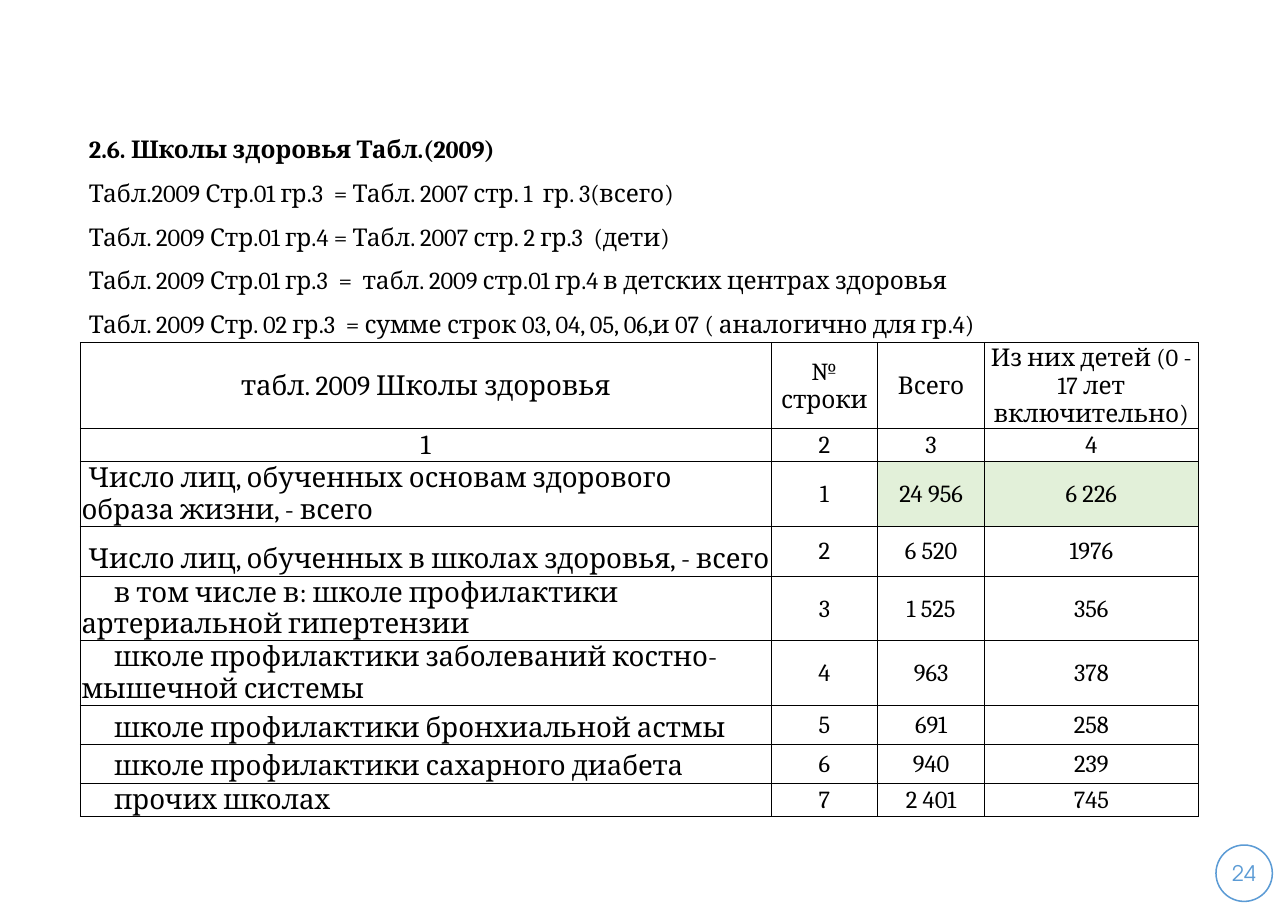
from dataclasses import dataclass

from lxml.etree import SubElement
from pptx import Presentation
from pptx.dml.color import RGBColor
from pptx.enum.shapes import MSO_SHAPE as Shape
from pptx.enum.text import MSO_ANCHOR as Anchor, MSO_AUTO_SIZE as AutoSize, PP_ALIGN as Align
from pptx.oxml.ns import qn
from pptx.util import Cm, Pt

COLORS = {"text": "000000", "accent": "5B9BD5", "total": "E2F0D9"}
SERIF, SANS = "Cambria", "TeX Gyre Adventor"


@dataclass
class SchoolRow:
    label: str
    values: tuple[str, ...]
    height: float
    indent: float | None = None  # None centres the label
    highlighted: bool = False


TITLE = "2.6. Школы здоровья Табл.(2009)"
CHECKS = [
    "Табл.2009 Стр.01 гр.3  = Табл. 2007 стр. 1  гр. 3(всего)",
    "Табл. 2009 Стр.01 гр.4 = Табл. 2007 стр. 2 гр.3  (дети)",
    "Табл. 2009 Стр.01 гр.3  =  табл. 2009 стр.01 гр.4 в детских центрах здоровья",
    "Табл. 2009 Стр. 02 гр.3  = сумме строк 03, 04, 05, 06,и 07 ( аналогично для гр.4)",
]
COLUMN_WIDTHS = (15.93, 2.46, 2.46, 4.93)
TOTAL, SCHOOL = 0.16, 0.75  # first-line indents of the labels, cm
ROWS = [
    SchoolRow("табл. 2009 Школы здоровья",
              ("№ строки", "Всего", "Из них детей (0 - 17 лет включительно)"), 1.8),
    SchoolRow("1", ("2", "3", "4"), 0.71),
    SchoolRow("Число лиц, обученных основам здорового образа жизни, - всего",
              ("1", "24 956", "6 226"), 1.4, TOTAL, True),
    SchoolRow("Число лиц, обученных в школах здоровья, - всего",
              ("2", "6 520", "1976"), 1.14, TOTAL),
    SchoolRow("в том числе в: школе профилактики артериальной гипертензии",
              ("3", "1 525", "356"), 1.4, SCHOOL),
    SchoolRow("школе профилактики заболеваний костно-мышечной системы",
              ("4", "963", "378"), 1.4, SCHOOL),
    SchoolRow("школе профилактики бронхиальной астмы", ("5", "691", "258"), 0.89, SCHOOL),
    SchoolRow("школе профилактики сахарного диабета", ("6", "940", "239"), 0.89, SCHOOL),
    SchoolRow("прочих школах", ("7", "2 401", "745"), 0.71, SCHOOL),
]


def rgb(name: str) -> RGBColor:
    return RGBColor.from_string(COLORS[name])


def add_text(paragraph, text: str, size: float, align, font=SERIF,
             color="text", bold=False) -> None:
    paragraph.alignment = align
    run = paragraph.add_run()
    run.text = text
    run.font.name, run.font.size, run.font.bold = font, Pt(size), bold
    run.font.color.rgb = rgb(color)


def set_indent(paragraph, first_line: float) -> None:
    properties = paragraph._p.get_or_add_pPr()
    properties.set("marL", "0")
    properties.set("indent", str(Cm(first_line)))


def add_borders(cell) -> None:
    properties = cell._tc.get_or_add_tcPr()
    for side in ("a:lnL", "a:lnR", "a:lnT", "a:lnB"):
        border = SubElement(properties, qn(side), w=str(Pt(0.5)))
        SubElement(SubElement(border, qn("a:solidFill")), qn("a:srgbClr"), val=COLORS["text"])


def add_checks(slide) -> None:
    checks = slide.placeholders[1]
    checks.left, checks.top, checks.width, checks.height = Cm(1.65), Cm(2.7), Cm(23.2), Cm(16.03)
    frame = checks.text_frame
    frame.word_wrap, frame.auto_size = True, AutoSize.NONE
    frame.vertical_anchor = Anchor.TOP
    frame.margin_left = frame.margin_right = frame.margin_top = frame.margin_bottom = Cm(0.4)
    for index, line in enumerate([TITLE, *CHECKS]):
        paragraph = frame.add_paragraph() if index else frame.paragraphs[0]
        set_indent(paragraph, 0)
        paragraph.space_before = Pt(9.3 if index else 0)
        SubElement(paragraph._p.get_or_add_pPr(), qn("a:buNone"))
        add_text(paragraph, line, 16, Align.JUSTIFY, bold=index == 0)


def fill_cell(cell, text: str, row: SchoolRow, column: int) -> None:
    is_label = column == 0
    indented = is_label and row.indent is not None
    cell.margin_left = cell.margin_right = cell.margin_top = Cm(0.03)
    cell.margin_bottom = 0
    cell.vertical_anchor = Anchor.BOTTOM if indented else Anchor.MIDDLE
    add_borders(cell)
    if row.highlighted and column >= 2:
        cell.fill.solid()
        cell.fill.fore_color.rgb = rgb("total")
    else:
        cell.fill.background()
    paragraph = cell.text_frame.paragraphs[0]
    if indented:
        set_indent(paragraph, row.indent)
    add_text(paragraph, text, 18 if is_label else 16, Align.LEFT if indented else Align.CENTER)


def add_schools(slide) -> None:
    schools = slide.shapes.add_table(
        len(ROWS), len(COLUMN_WIDTHS), Cm(1.85), Cm(7.9),
        Cm(sum(COLUMN_WIDTHS)), Cm(sum(row.height for row in ROWS))).table
    schools.first_row = schools.horz_banding = False
    for column, width in zip(schools.columns, COLUMN_WIDTHS):
        column.width = Cm(width)
    for index, row in enumerate(ROWS):
        schools.rows[index].height = Cm(row.height)
        for column, text in enumerate((row.label, *row.values)):
            fill_cell(schools.cell(index, column), text, row, column)


def add_page_number(slide) -> None:
    badge = slide.shapes.add_shape(Shape.OVAL, Cm(28.04), Cm(19.48), Cm(1.3), Cm(1.3))
    badge.shadow.inherit = False
    badge.fill.background()
    badge.line.color.rgb, badge.line.width = rgb("accent"), Pt(1)
    frame = badge.text_frame
    frame.margin_left = frame.margin_right = frame.margin_top = frame.margin_bottom = 0
    frame.vertical_anchor = Anchor.MIDDLE
    add_text(frame.paragraphs[0], "24", 14, Align.CENTER, SANS, "accent")


def main() -> None:
    deck = Presentation()
    deck.slide_width, deck.slide_height = Cm(29.7), Cm(21)
    slide = deck.slides.add_slide(deck.slide_layouts[1])
    # The heading is the first line of the body
    heading = slide.shapes.title._element
    heading.getparent().remove(heading)
    # Page number, check rules, table
    add_page_number(slide)
    add_checks(slide)
    add_schools(slide)
    deck.save("out.pptx")


if __name__ == "__main__":
    main()
